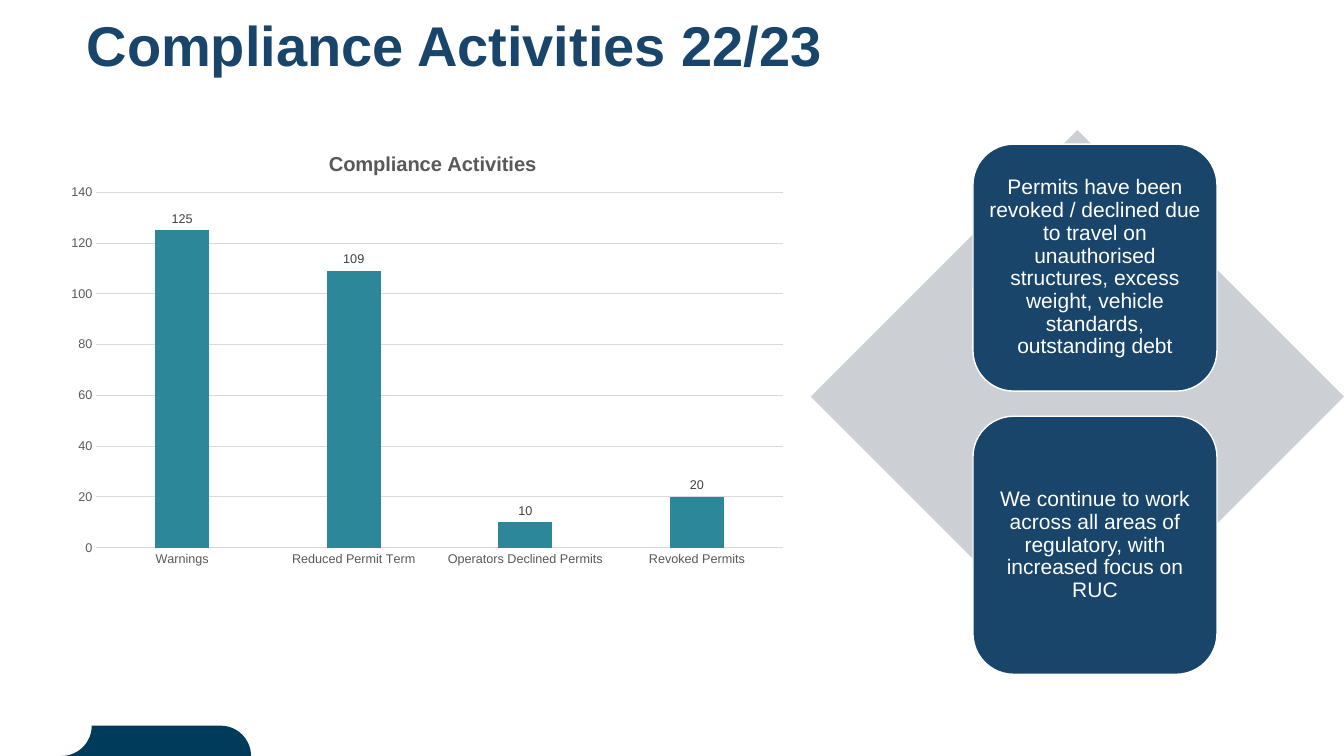
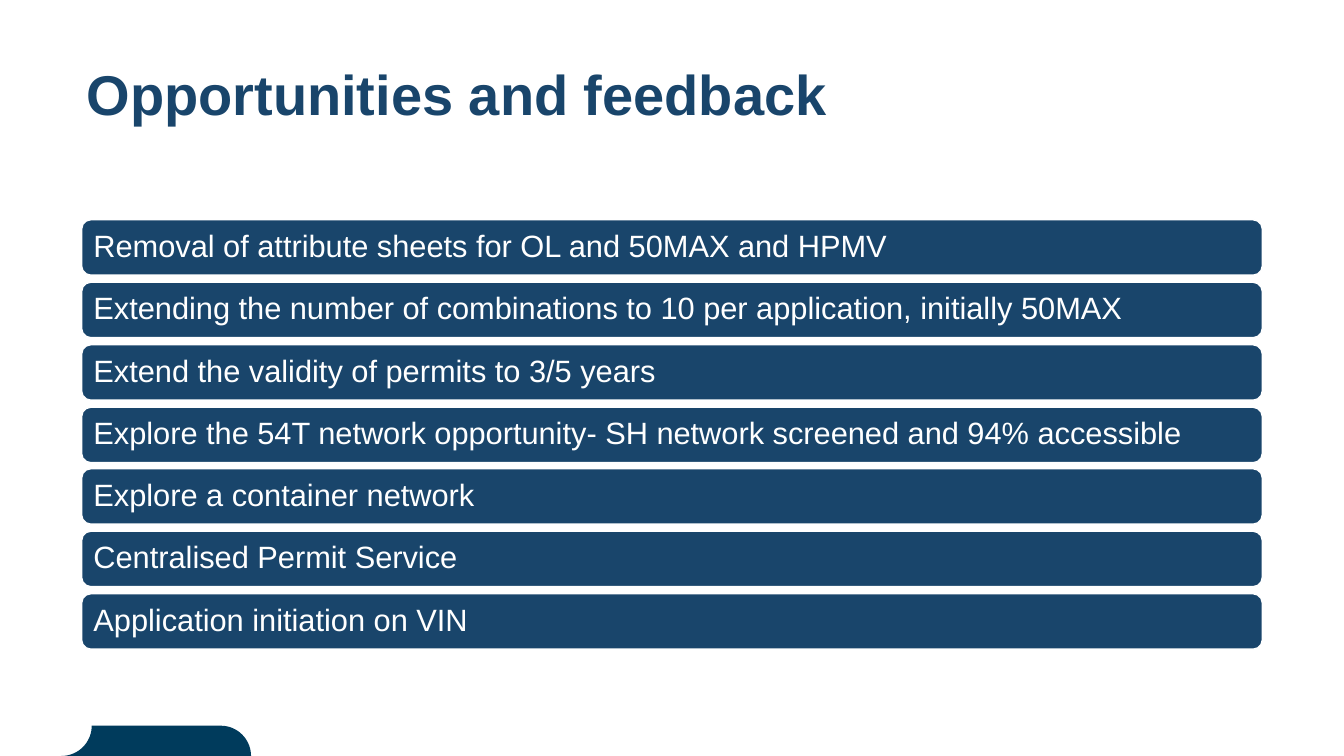
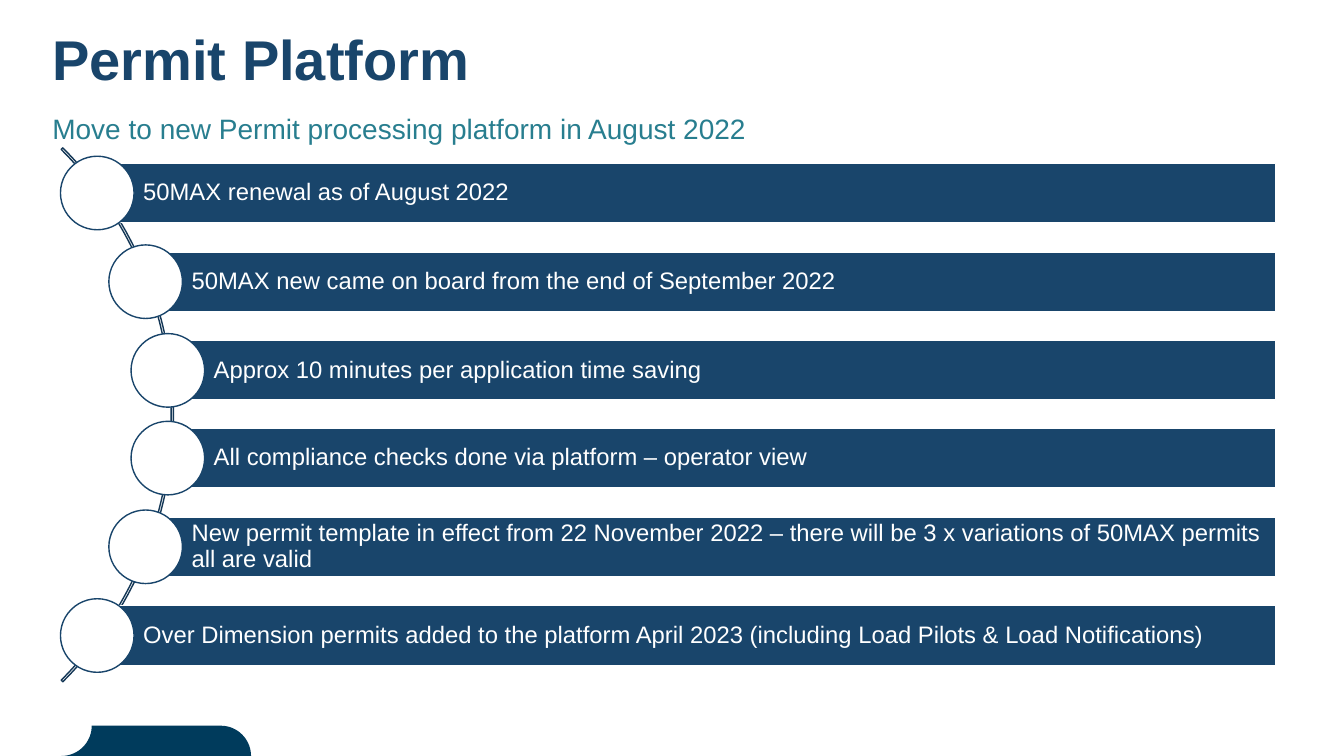
from dataclasses import dataclass
from math import cos, radians, sin

from lxml.etree import SubElement
from pptx import Presentation
from pptx.chart.data import CategoryChartData
from pptx.dml.color import RGBColor
from pptx.enum.chart import XL_CHART_TYPE, XL_LABEL_POSITION, XL_TICK_MARK
from pptx.enum.shapes import MSO_SHAPE
from pptx.enum.text import MSO_ANCHOR, MSO_AUTO_SIZE, PP_ALIGN
from pptx.oxml.ns import qn
from pptx.util import Emu, Pt

SCALE = 9144  # EMU in one px, 100 px to the inch


@dataclass(frozen=True)
class Theme:
    font: str = "Arial"
    navy: str = "19456B"
    band: str = "003B5C"
    arc: str = "143756"
    teal: str = "2C8799"
    sub: str = "287E8F"
    pale: str = "CCCFD4"
    grid: str = "D9D9D9"
    axis: str = "595959"
    label: str = "404040"
    white: str = "FFFFFF"
    title_pt: float = 40
    sub_pt: float = 20
    card_pt: float = 15
    row_pt: float = 22
    step_pt: float = 17
    chart_pt: float = 14.4
    tick_pt: float = 9


def px(num):
    return Emu(round(num * SCALE))


def rgb(code):
    return RGBColor.from_string(code)


def style(font, size, color, bold=False):
    font.name, font.size, font.bold = Theme.font, Pt(size), bold
    font.color.rgb = rgb(color)


def write(frame, text, size, color, bold=False, align=PP_ALIGN.LEFT,
          anchor=MSO_ANCHOR.MIDDLE, inset=(10, 5, 10, 5)):
    frame.word_wrap = True
    frame.auto_size = MSO_AUTO_SIZE.NONE
    frame.vertical_anchor = anchor
    (frame.margin_left, frame.margin_top,
     frame.margin_right, frame.margin_bottom) = map(px, inset)
    para = frame.paragraphs[0]
    para.alignment, para.line_spacing = align, 0.9
    run = para.add_run()
    run.text = text
    style(run.font, size, color, bold)


def stroke(line, color, width):
    line.color.rgb = rgb(color)
    line.width = Pt(width)


def place(node, index, **part):
    """Give a chart part a manual layout, as shares of the chart."""
    for old in node.findall(qn("c:layout")):
        node.remove(old)
    box = node.makeelement(qn("c:layout"))
    node.insert(index, box)
    inner = SubElement(box, qn("c:manualLayout"))
    if "w" in part:
        SubElement(inner, qn("c:layoutTarget")).set("val", "inner")
    for key in ("xMode", "yMode"):
        SubElement(inner, qn(f"c:{key}")).set("val", "edge")
    for key, val in part.items():
        SubElement(inner, qn(f"c:{key}")).set("val", str(val))


class Deck:
    def __init__(self, theme):
        self.theme = theme
        self.file = Presentation()
        self.file.slide_width, self.file.slide_height = px(1333), px(750)
        self.base = self.file.slide_layouts[5]
        self.slide = None

    def page(self, title, left, top):
        first = self.slide is None
        self.slide = self.file.slides.add_slide(self.base)
        if first:
            self.band()
        head = self.slide.shapes.title
        head.left, head.top, head.width, head.height = map(
            px, (left, top, 1171, 87))
        write(head.text_frame, title, size=self.theme.title_pt,
              color=self.theme.navy, bold=True, anchor=MSO_ANCHOR.TOP)

    def band(self):
        """Draw the foot band and move it to the shared layout."""
        def curve(mid, low, start, stop):
            return [(px(mid + 30 * cos(radians(deg))),
                     px(low + 30 * sin(radians(deg))))
                    for deg in range(start, stop, 5 if stop > start else -5)]

        dots = curve(219, 750, -90, 5) + curve(61, 720, 90, -5)
        pen = self.slide.shapes.build_freeform(*dots[0], scale=1.0)
        pen.add_line_segments(dots[1:], close=True)
        shape = pen.convert_to_shape()
        self.paint(shape, self.theme.band)
        shape.element.nvSpPr.cNvPr.set("id", "99")
        self.base.element.cSld.spTree.append(shape.element)

    def paint(self, shape, fill=None, line=None):
        shape.shadow.inherit = False
        if fill:
            shape.fill.solid()
            shape.fill.fore_color.rgb = rgb(fill)
        else:
            shape.fill.background()
        if line:
            stroke(shape.line, line, 1)
        else:
            shape.line.fill.background()

    def shape(self, kind, left, top, width, height, fill=None, line=None):
        item = self.slide.shapes.add_shape(
            kind, *map(px, (left, top, width, height)))
        self.paint(item, fill, line)
        return item

    def box(self, kind, text, *at, **form):
        item = self.shape(kind, *at, self.theme.navy, self.theme.white)
        write(item.text_frame, text, color=self.theme.white, **form)

    def note(self, text, *at, **form):
        item = self.slide.shapes.add_textbox(*map(px, at))
        write(item.text_frame, text, **form)

    def chart(self, title, data, *at):
        look = self.theme
        feed = CategoryChartData()
        feed.categories = list(data)
        feed.add_series("Series 1", list(data.values()))
        chart = self.slide.shapes.add_chart(
            XL_CHART_TYPE.COLUMN_CLUSTERED, *map(px, at), feed).chart
        chart.has_legend = False
        style(chart.font, look.tick_pt, look.axis)
        # Title
        chart.has_title = True
        run = chart.chart_title.text_frame.paragraphs[0].add_run()
        run.text = title
        style(run.font, look.chart_pt, look.axis, bold=True)
        place(chart.chart_title.element, 1, x=0.36, y=0.04)
        place(chart.element.find(".//" + qn("c:plotArea")), 0,
              x=0.05, y=0.14, w=0.93, h=0.8)
        # Axes
        cat, val = chart.category_axis, chart.value_axis
        for axis in (cat, val):
            axis.major_tick_mark = axis.minor_tick_mark = XL_TICK_MARK.NONE
            style(axis.tick_labels.font, look.tick_pt, look.axis)
        stroke(cat.format.line, look.grid, 0.75)
        val.format.line.fill.background()
        val.minimum_scale, val.maximum_scale, val.major_unit = 0, 140, 20
        stroke(val.major_gridlines.format.line, look.grid, 0.75)
        # Columns and labels
        plot = chart.plots[0]
        plot.gap_width, plot.overlap = 219, -27
        plot.vary_by_categories = False
        fill = plot.series[0].format.fill
        fill.solid()
        fill.fore_color.rgb = rgb(look.teal)
        plot.has_data_labels = True
        tags = plot.data_labels
        tags.show_value = True
        tags.position = XL_LABEL_POSITION.OUTSIDE_END
        style(tags.font, look.tick_pt, look.label)


def main():
    look = Theme()
    deck = Deck(look)

    # Compliance: chart and two cards on a diamond
    deck.page("Compliance Activities 22/23", 76, 13)
    deck.shape(MSO_SHAPE.DIAMOND, 804, 129, 529, 529, look.pale)
    cards = (
        (143, 245, "Permits have been revoked / declined due to travel on "
                   "unauthorised structures, excess weight, vehicle "
                   "standards, outstanding debt"),
        (413, 256, "We continue to work across all areas of regulatory, "
                   "with increased focus on RUC"),
    )
    for top, high, text in cards:
        deck.box(MSO_SHAPE.ROUNDED_RECTANGLE, text, 965, top, 242, high,
                 size=look.card_pt, align=PP_ALIGN.CENTER, inset=(4,) * 4)
    deck.chart("Compliance Activities",
               {"Warnings": 125, "Reduced Permit Term": 109,
                "Operators Declined Permits": 10, "Revoked Permits": 20},
               59, 129, 732, 441)

    # Opportunities: evenly spaced rows
    deck.page("Opportunities and feedback", 76, 62)
    rows = (
        "Removal of attribute sheets for OL and 50MAX and HPMV",
        "Extending the number of combinations to 10 per application, "
        "initially 50MAX",
        "Extend the validity of permits to 3/5 years",
        "Explore the 54T network opportunity- SH network screened and "
        "94% accessible",
        "Explore a container network",
        "Centralised Permit Service",
        "Application initiation on VIN",
    )
    for num, text in enumerate(rows):
        deck.box(MSO_SHAPE.ROUNDED_RECTANGLE, text,
                 81, round(218 + 371 * num / 6), 1171, 55,
                 size=look.row_pt, inset=(9,) * 4)

    # Platform: steps along an arc
    deck.page("Permit Platform", 42, 27)
    deck.note("Move to new Permit processing platform in August 2022",
              42, 109, 1169, 59, size=look.sub_pt, color=look.sub,
              anchor=MSO_ANCHOR.TOP)
    arc = deck.shape(MSO_SHAPE.BLOCK_ARC, -577, 37, 749, 749, line=look.arc)
    for num, val in enumerate((189, 27, 0.003)):
        arc.adjustments[num] = val
    steps = (
        "50MAX renewal as of August 2022",
        "50MAX new came on board from the end of September 2022",
        "Approx 10 minutes per application time saving",
        "All compliance checks done via platform – operator view",
        "New permit template in effect from 22 November 2022 – there will "
        "be 3 x variations of 50MAX permits all are valid",
        "Over Dimension permits added to the platform April 2023 "
        "(including Load Pilots & Load Notifications)",
    )
    half = (96, 144, 166)
    for num, (left, text) in enumerate(zip(half + half[::-1], steps)):
        top = round(162 + 439 * num / 5)
        deck.box(MSO_SHAPE.RECTANGLE, text, left, top, 1265 - left, 59,
                 size=look.step_pt, inset=(46, 5, 5, 5))
        deck.shape(MSO_SHAPE.OVAL, left - 36, top - 7, 73, 73,
                   look.white, look.navy)

    deck.file.save("out.pptx")


if __name__ == "__main__":
    main()
